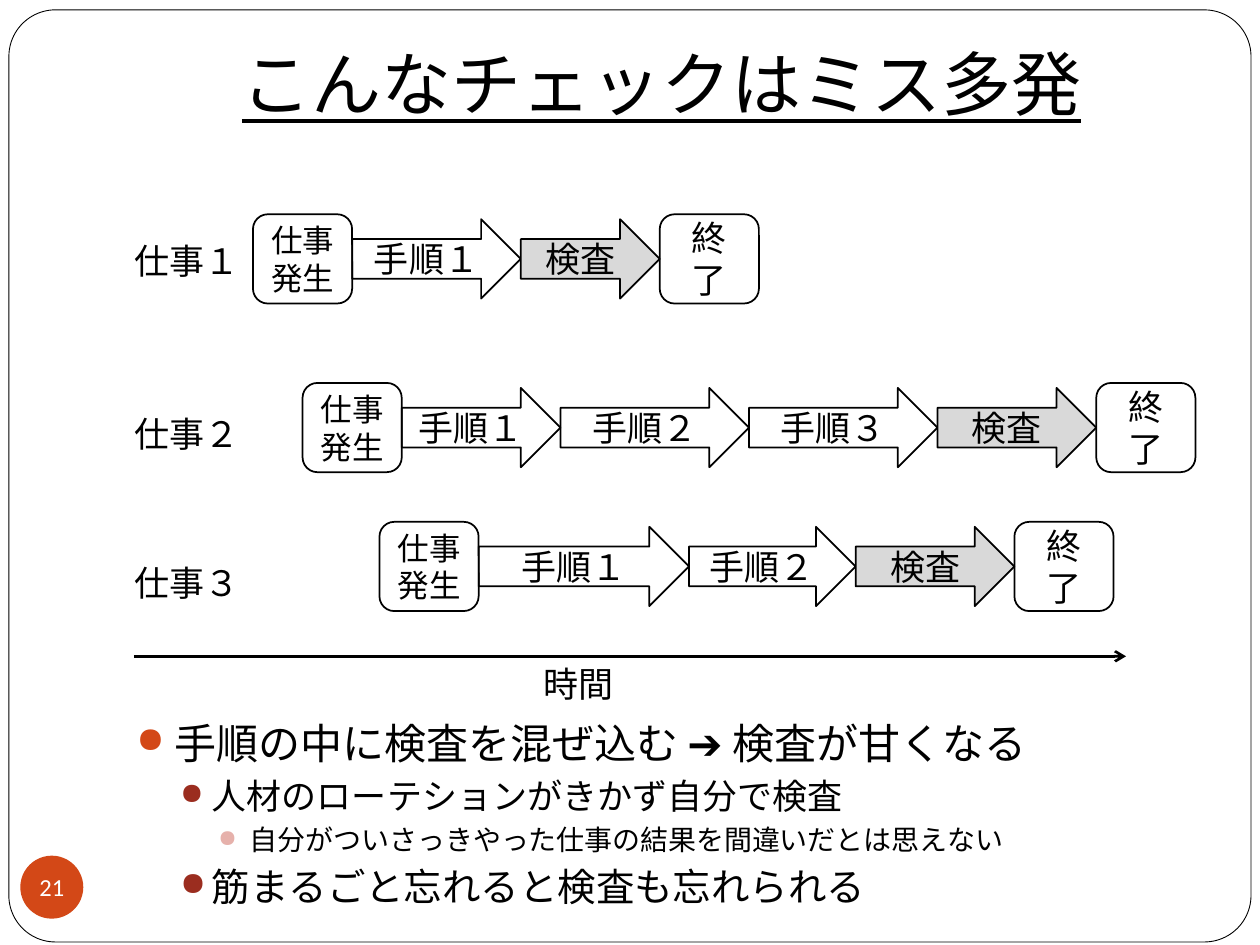
"""Build the slide on checks that let mistakes through."""
import pptx
import pptx.dml.color
import pptx.enum.shapes
import pptx.enum.text
import pptx.oxml
import pptx.oxml.ns
import pptx.util
from lxml import etree

Cm, Pt = pptx.util.Cm, pptx.util.Pt
RGB = pptx.dml.color.RGBColor
SHAPE = pptx.enum.shapes.MSO_SHAPE
ALIGN = pptx.enum.text.PP_ALIGN
ANCHOR = pptx.enum.text.MSO_ANCHOR
qn = pptx.oxml.ns.qn

BLACK, WHITE = RGB(0, 0, 0), RGB(255, 255, 255)
GRAY = RGB(0xD9, 0xD9, 0xD9)
ORANGE = RGB(0xD3, 0x48, 0x17)
RED = RGB(0x9B, 0x2D, 0x1F)
PINK = RGB(0xE6, 0xB1, 0xAB)
LATIN, CJK = "Calibri", "Noto Sans CJK JP"

TITLE = "こんなチェックはミス多発"
START, CHECK, END = "仕事発生", "検査", "終了"
JOBS = [
    ("仕事１", 4.7, 5.1, 4.32, [("手順１", 3.4), (CHECK, 2.8)]),
    ("仕事２", 8.2, 6.1, 7.72,
     [("手順１", 3.2), ("手順２", 3.8), ("手順３", 3.8), (CHECK, 3.2)]),
    ("仕事３", 11.2, 7.65, 10.52,
     [("手順１", 4.24), ("手順２", 3.36), (CHECK, 3.2)]),
]
POINTS = [
    (0, "手順の中に検査を混ぜ込む ➔ 検査が甘くなる", 24),
    (1, "人材のローテションがきかず自分で検査", 20),
    (2, "自分がついさっきやった仕事の結果を間違いだとは思えない", 16),
    (1, "筋まるごと忘れると検査も忘れられる", 22),
]
LEVELS = [(0.76, 0.76, 5.8, ORANGE), (1.52, 0.64, 3.8, RED), (2.29, 0.64, 3.8, PINK)]
BOX_W, BOX_H, ARROW_H = 2, 1.8, 1.6


def write(p, text, size=20, font=CJK, color=BLACK, align=None, underline=None):
    p.alignment = align
    r = p.add_run()
    r.text = text
    r.font.size, r.font.name, r.font.underline = Pt(size), font, underline
    r.font.color.rgb = color
    latin = r.font._element.find(qn("a:latin"))
    ea = etree.Element(qn("a:ea"), typeface=CJK)
    latin.addnext(ea)


def add_shape(s, kind, x, y, w, h, fill=None, line=1):
    sp = s.shapes.add_shape(kind, Cm(x), Cm(y), Cm(w), Cm(h))
    sp.shadow.inherit = False
    if fill is None:
        sp.fill.background()
    else:
        sp.fill.solid()
        sp.fill.fore_color.rgb = fill
    if line:
        sp.line.color.rgb, sp.line.width = BLACK, Pt(line)
    else:
        sp.line.fill.background()
    sp.text_frame.vertical_anchor = ANCHOR.MIDDLE
    return sp


def add_step(s, kind, text, x, y, w, h, size=20, fill=None):
    sp = add_shape(s, kind, x, y, w, h, fill)
    write(sp.text_frame.paragraphs[0], text, size=size, align=ALIGN.CENTER)


def add_label(s, text, x, y, w):
    tf = s.shapes.add_textbox(Cm(x), Cm(y), Cm(w), Cm(1.11)).text_frame
    tf.word_wrap = False
    write(tf.paragraphs[0], text)


def add_job(s, label, label_y, x, y, steps):
    add_label(s, label, 2.46, label_y, 2.64)
    add_step(s, SHAPE.ROUNDED_RECTANGLE, START, x, y, BOX_W, BOX_H, size=18)
    x += BOX_W
    for text, w in steps:
        add_step(s, SHAPE.RIGHT_ARROW, text, x, y + (BOX_H - ARROW_H) / 2, w, ARROW_H,
                 fill=GRAY if text == CHECK else None)
        x += w
    add_step(s, SHAPE.ROUNDED_RECTANGLE, END, x, y, BOX_W, BOX_H)


def add_time_axis(s):
    line = s.shapes.add_connector(pptx.enum.shapes.MSO_CONNECTOR.STRAIGHT,
                                  Cm(2.7), Cm(13.23), Cm(22.7), Cm(13.23))
    line.line.color.rgb, line.line.width = BLACK, Pt(1.5)
    etree.SubElement(line.line._get_or_add_ln(), qn("a:tailEnd"), type="arrow")
    etree.SubElement(line.element.spPr, qn("a:effectLst"))
    add_label(s, "時間", 10.7, 13.23, 1.92)


def add_points(s):
    tf = s.shapes.add_textbox(Cm(2.5), Cm(14.33), Cm(21.2), Cm(3.6)).text_frame
    tf.word_wrap = True
    for i, (level, text, size) in enumerate(POINTS):
        p = tf.add_paragraph() if i else tf.paragraphs[0]
        margin, hang, before, color = LEVELS[level]
        write(p, text, size=size, font=LATIN)
        p.level, p.space_before = level, Pt(before)
        pPr = p._p.get_or_add_pPr()
        pPr.set("marL", str(Cm(margin)))
        pPr.set("indent", str(-Cm(hang)))
        clr = etree.SubElement(pPr, qn("a:buClr"))
        etree.SubElement(clr, qn("a:srgbClr"), val=str(color))
        etree.SubElement(pPr, qn("a:buSzPct"), val="85000")
        etree.SubElement(pPr, qn("a:buChar"), char="●")


def add_title(s):
    title = s.shapes.title
    title.left, title.top, title.width, title.height = Cm(2.54), Cm(0.76), Cm(21.59), Cm(2)
    tf = title.text_frame
    tf.auto_size = pptx.enum.text.MSO_AUTO_SIZE.NONE
    tf.vertical_anchor, tf.margin_bottom = ANCHOR.BOTTOM, Cm(0.25)
    write(tf.paragraphs[0], TITLE, size=40, font=LATIN, align=ALIGN.CENTER, underline=True)
    frame = add_shape(s, SHAPE.ROUNDED_RECTANGLE, 0.18, 0.2, 25.04, 18.79, WHITE, 0.5)
    frame.adjustments[0] = 0.05
    title.element.addprevious(frame.element)


def add_page_number(s):
    tf = add_shape(s, SHAPE.OVAL, 0.41, 17.25, 1.27, 1.27, ORANGE, 0).text_frame
    tf.margin_left = tf.margin_right = tf.margin_top = tf.margin_bottom = 0
    tf.word_wrap = False
    write(tf.paragraphs[0], "21", size=14, font=LATIN, color=WHITE, align=ALIGN.CENTER)


def main():
    prs = pptx.Presentation()
    prs.slide_width, prs.slide_height = Cm(25.4), Cm(19.05)
    s = prs.slides.add_slide(prs.slide_layouts.get_by_name("Title Only"))
    add_title(s)
    for job in JOBS:
        add_job(s, *job)
    add_time_axis(s)
    add_points(s)
    add_page_number(s)
    prs.save("out.pptx")


if __name__ == "__main__":
    main()
